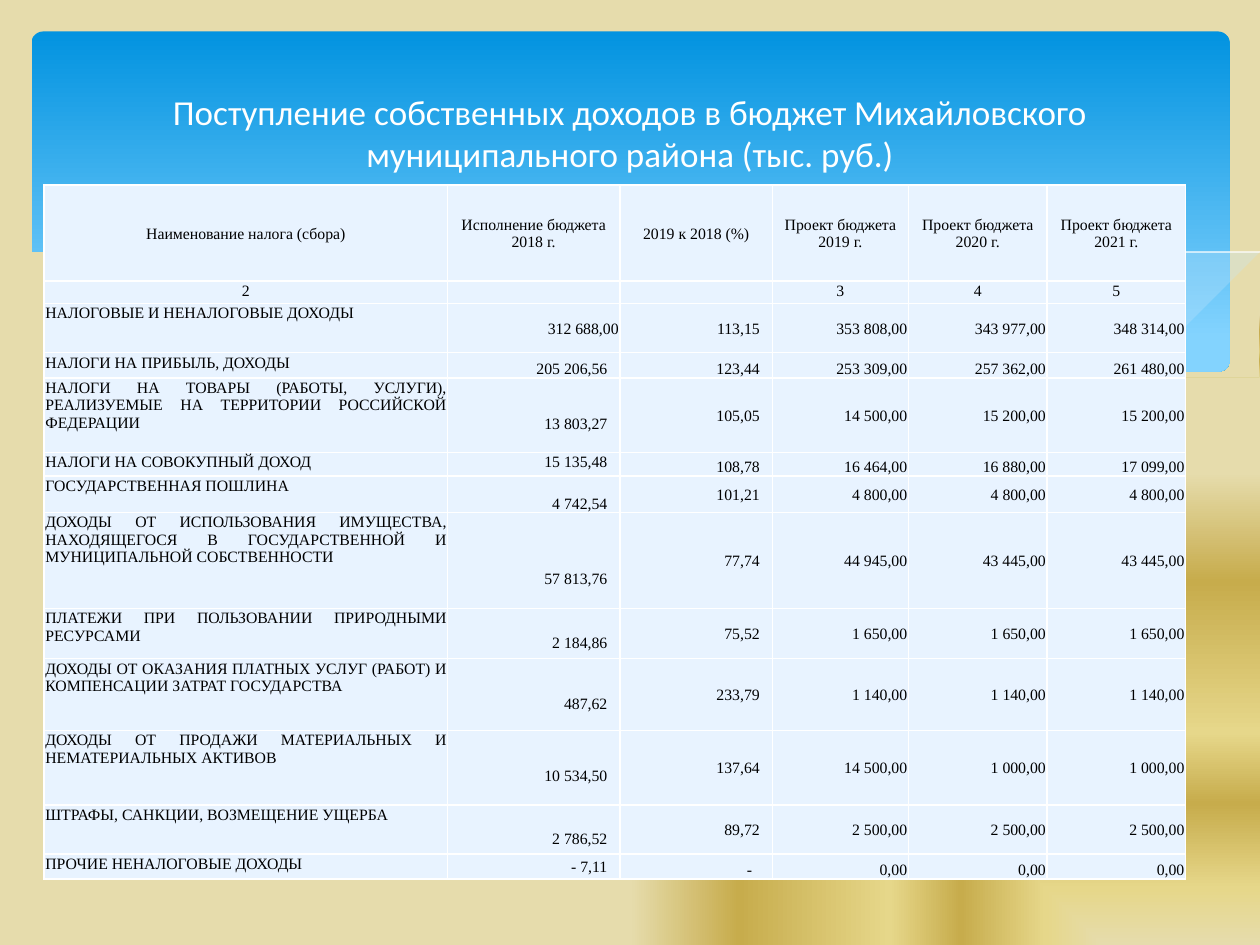
import pptx
import pptx.util
import pptx.dml.color
import pptx.enum.shapes
import pptx.enum.text
import pptx.oxml
from pptx.oxml.ns import qn, nsdecls

Inches, Pt = pptx.util.Inches, pptx.util.Pt
ALIGN, ANCHOR = pptx.enum.text.PP_ALIGN, pptx.enum.text.MSO_ANCHOR
TOP, MID, LOW = ANCHOR.TOP, ANCHOR.MIDDLE, ANCHOR.BOTTOM

TITLE = "Поступление собственных доходов в бюджет Михайловского муниципального района (тыс. руб.)"
HEAD = ["Наименование налога (сбора)", "Исполнение бюджета 2018 г.", "2019 к 2018 (%)",
        "Проект бюджета 2019 г.", "Проект бюджета 2020 г.", "Проект бюджета 2021 г."]
NUMS = ["2", "", "", "3", "4", "5"]
# name and values, height, lines skipped above the 2018 value, its anchor, anchor of the rest
ROWS = [
    (["НАЛОГОВЫЕ И НЕНАЛОГОВЫЕ ДОХОДЫ", "312 688,00", "113,15",
      "353 808,00", "343 977,00", "348 314,00"], 0.39, 0, MID, MID),
    (["НАЛОГИ НА ПРИБЫЛЬ, ДОХОДЫ", "205 206,56", "123,44",
      "253 309,00", "257 362,00", "261 480,00"], 0.2, 0, LOW, LOW),
    (["НАЛОГИ НА ТОВАРЫ (РАБОТЫ, УСЛУГИ), РЕАЛИЗУЕМЫЕ НА ТЕРРИТОРИИ РОССИЙСКОЙ ФЕДЕРАЦИИ",
      "13 803,27", "105,05", "14 500,00", "15 200,00", "15 200,00"], 0.59, 1, MID, MID),
    (["НАЛОГИ НА СОВОКУПНЫЙ ДОХОД", "15 135,48", "108,78",
      "16 464,00", "16 880,00", "17 099,00"], 0.19, 0, TOP, LOW),
    (["ГОСУДАРСТВЕННАЯ ПОШЛИНА", "4 742,54", "101,21",
      "4 800,00", "4 800,00", "4 800,00"], 0.28, 1, MID, MID),
    (["ДОХОДЫ ОТ ИСПОЛЬЗОВАНИЯ ИМУЩЕСТВА, НАХОДЯЩЕГОСЯ В ГОСУДАРСТВЕННОЙ И МУНИЦИПАЛЬНОЙ "
      "СОБСТВЕННОСТИ", "57 813,76", "77,74", "44 945,00", "43 445,00", "43 445,00"],
     0.76, 2, MID, MID),
    (["ПЛАТЕЖИ ПРИ ПОЛЬЗОВАНИИ ПРИРОДНЫМИ РЕСУРСАМИ", "2 184,86", "75,52",
      "1 650,00", "1 650,00", "1 650,00"], 0.4, 1, MID, MID),
    (["ДОХОДЫ ОТ ОКАЗАНИЯ ПЛАТНЫХ УСЛУГ (РАБОТ) И КОМПЕНСАЦИИ ЗАТРАТ ГОСУДАРСТВА",
      "487,62", "233,79", "1 140,00", "1 140,00", "1 140,00"], 0.57, 2, TOP, MID),
    (["ДОХОДЫ ОТ ПРОДАЖИ МАТЕРИАЛЬНЫХ И НЕМАТЕРИАЛЬНЫХ АКТИВОВ",
      "10 534,50", "137,64", "14 500,00", "1 000,00", "1 000,00"], 0.59, 2, TOP, MID),
    (["ШТРАФЫ, САНКЦИИ, ВОЗМЕЩЕНИЕ УЩЕРБА", "2 786,52", "89,72",
      "2 500,00", "2 500,00", "2 500,00"], 0.39, 1, MID, MID),
    (["ПРОЧИЕ НЕНАЛОГОВЫЕ ДОХОДЫ", "- 7,11", "-", "0,00", "0,00", "0,00"], 0.2, 0, MID, LOW),
]
COLS = [3.2, 1.37, 1.21, 1.08, 1.1, 1.1]
LINE = 0.14

GOLD = [(0, "E6DCAC"), (12, "E6D78A"), (30, "C7AC4C"), (45, "E6D78A"), (77, "C7AC4C"),
        (100, "E6DCAC")]
BLUE = [(0, "0293E0"), (90, "83D3FE")]
CORNER = '<a:path path="rect"><a:fillToRect l="100000" t="100000"/></a:path>'
DOWN = '<a:lin ang="5400000" scaled="0"/>'

# translucent waves: opacity in percent, outline
WAVES = [
    (29, [(9.76, 2), (9.35, 2.07), (8.61, 2.23), (7.79, 2.42), (7.06, 2.57), (6.61, 2.65),
          (7.05, 2.71), (7.57, 2.76), (8.03, 2.78), (8.54, 2.76), (8.97, 2.7), (9.35, 2.62),
          (9.76, 2.47)]),
    (40, [(8.93, 2.73), (8.37, 2.65), (7.75, 2.54), (7.06, 2.4), (6.29, 2.22), (5.69, 2.08),
          (5.14, 1.98), (4.65, 1.91), (4.2, 1.87), (3.61, 1.85), (2.86, 1.91), (3.62, 2.03),
          (4.49, 2.22), (5.3, 2.4), (6.01, 2.55), (6.65, 2.66), (7.22, 2.74), (7.73, 2.77),
          (8.28, 2.78), (8.93, 2.73)]),
]
CURVES = [
    [(3.09, 1.95), (3.44, 1.9), (4.01, 1.87), (4.69, 1.89), (5.33, 1.94), (6.08, 2.04),
     (6.95, 2.19), (7.95, 2.41), (9.07, 2.72)],
    [(6.13, 2.57), (6.95, 2.35), (7.76, 2.16), (8.66, 1.99), (9.24, 1.9), (9.75, 1.85)],
]
SAND = [(9.77, 2.46), (9.5, 2.56), (9.1, 2.67), (8.63, 2.74), (8.09, 2.77), (7.44, 2.74),
        (6.68, 2.65), (5.79, 2.5), (4.47, 2.2), (3.65, 2.02), (2.92, 1.9), (2.3, 1.85),
        (1.77, 1.84), (1.19, 1.87), (0.76, 1.95), (0.46, 2.03), (0.23, 2.13), (0.23, 3.29),
        (9.77, 3.29)]


def color(code):
    return pptx.dml.color.RGBColor.from_string(code)


def paint(fill, code):
    fill.solid()
    fill.fore_color.rgb = color(code)


def blend(fill, props, stops, way):
    """Fill with a gradient; props is the XML element that holds the fill."""
    fill.solid()
    marks = "".join(f'<a:gs pos="{pos * 1000}"><a:srgbClr val="{code}"/></a:gs>'
                    for pos, code in stops)
    props.replace(props.find(qn("a:solidFill")), pptx.oxml.parse_xml(
        f'<a:gradFill {nsdecls("a")} rotWithShape="1"><a:gsLst>{marks}</a:gsLst>{way}</a:gradFill>'))


def outline(slide, points, close=True):
    pen = slide.shapes.build_freeform(*points[0], scale=Inches(1))
    pen.add_line_segments(points[1:], close=close)
    shape = pen.convert_to_shape()
    shape.shadow.inherit = False
    shape.line.fill.background()
    return shape


def backdrop(slide):
    fill = slide.background.fill
    fill.solid()
    blend(fill, slide.element.find(".//" + qn("p:bgPr")), GOLD, CORNER)
    panel = slide.shapes.add_shape(pptx.enum.shapes.MSO_SHAPE.ROUNDED_RECTANGLE,
                                   Inches(0.25), Inches(0.25), Inches(9.51), Inches(2.7))
    panel.adjustments[0] = 0.034
    panel.shadow.inherit = False
    panel.line.fill.background()
    blend(panel.fill, panel.element.spPr, BLUE, DOWN)
    for part, points in WAVES:
        wave = outline(slide, points)
        paint(wave.fill, "C6E7FC")
        tint = wave.element.spPr.find(qn("a:solidFill"))[0]
        tint.append(pptx.oxml.parse_xml(f'<a:alpha {nsdecls("a")} val="{part * 1000}"/>'))
    for points in CURVES:
        curve = outline(slide, points, close=False)
        curve.fill.background()
        paint(curve.line.fill, "FFFFFF")
        curve.line.width = 0
    sand = outline(slide, SAND)
    blend(sand.fill, sand.element.spPr, GOLD, CORNER)


def write(cell, text, align, anchor, right=0.01, skip=0):
    cell.margin_left, cell.margin_right = Inches(0.01), Inches(right)
    cell.margin_top, cell.margin_bottom = Inches(0.01 + skip * LINE), 0
    cell.vertical_anchor = anchor
    cell.text = text
    para = cell.text_frame.paragraphs[0]
    para.alignment = align
    para.font.size, para.font.name = Pt(9), "Times New Roman"
    para.font.color.rgb = color("000000")
    props = cell._tc.get_or_add_tcPr()
    for side in ("lnL", "lnR", "lnT", "lnB"):
        props.append(pptx.oxml.parse_xml(
            f'<a:{side} {nsdecls("a")} w="12700"><a:solidFill><a:srgbClr val="FFFFFF"/>'
            f'</a:solidFill></a:{side}>'))
    paint(cell.fill, "E8F3FF")


def budget(slide):
    tall = [0.76, 0.18] + [row[1] for row in ROWS]
    table = slide.shapes.add_table(len(tall), len(COLS), Inches(0.35), Inches(1.47),
                                   Inches(sum(COLS)), Inches(sum(tall))).table
    table.first_row = table.horz_banding = False
    for col, width in zip(table.columns, COLS):
        col.width = Inches(width)
    for row, height in zip(table.rows, tall):
        row.height = Inches(height)
    for c in range(len(COLS)):
        write(table.cell(0, c), HEAD[c], ALIGN.CENTER, MID)
        write(table.cell(1, c), NUMS[c], ALIGN.CENTER, TOP)
    for r, (texts, _, skip, first, rest) in enumerate(ROWS, 2):
        for c, text in enumerate(texts):
            cell = table.cell(r, c)
            if c == 0:
                write(cell, text, ALIGN.JUSTIFY, TOP)
            elif c == 1:
                write(cell, text, ALIGN.RIGHT, first, 0.01 if r == 2 else 0.1, skip)
            else:
                gap = 0.01 if c > 2 else 0.16 if text == "-" else 0.1
                write(cell, text, ALIGN.RIGHT, rest, gap)


def heading(slide):
    title = slide.shapes.title
    title.left, title.top = Inches(0.5), Inches(0.37)
    title.width, title.height = Inches(9), Inches(1.37)
    title.text_frame.text = TITLE
    title.text_frame.vertical_anchor = MID
    para = title.text_frame.paragraphs[0]
    para.alignment = ALIGN.CENTER
    para.font.size, para.font.name = Pt(20), "Calibri"
    para.font.color.rgb = color("FFFFFF")
    title.element.getparent().append(title.element)


def main():
    deck = pptx.Presentation()
    deck.slide_width, deck.slide_height = Inches(10), Inches(7.5)
    slide = deck.slides.add_slide(deck.slide_layouts[5])
    backdrop(slide)
    budget(slide)
    heading(slide)
    deck.save("out.pptx")


if __name__ == "__main__":
    main()
